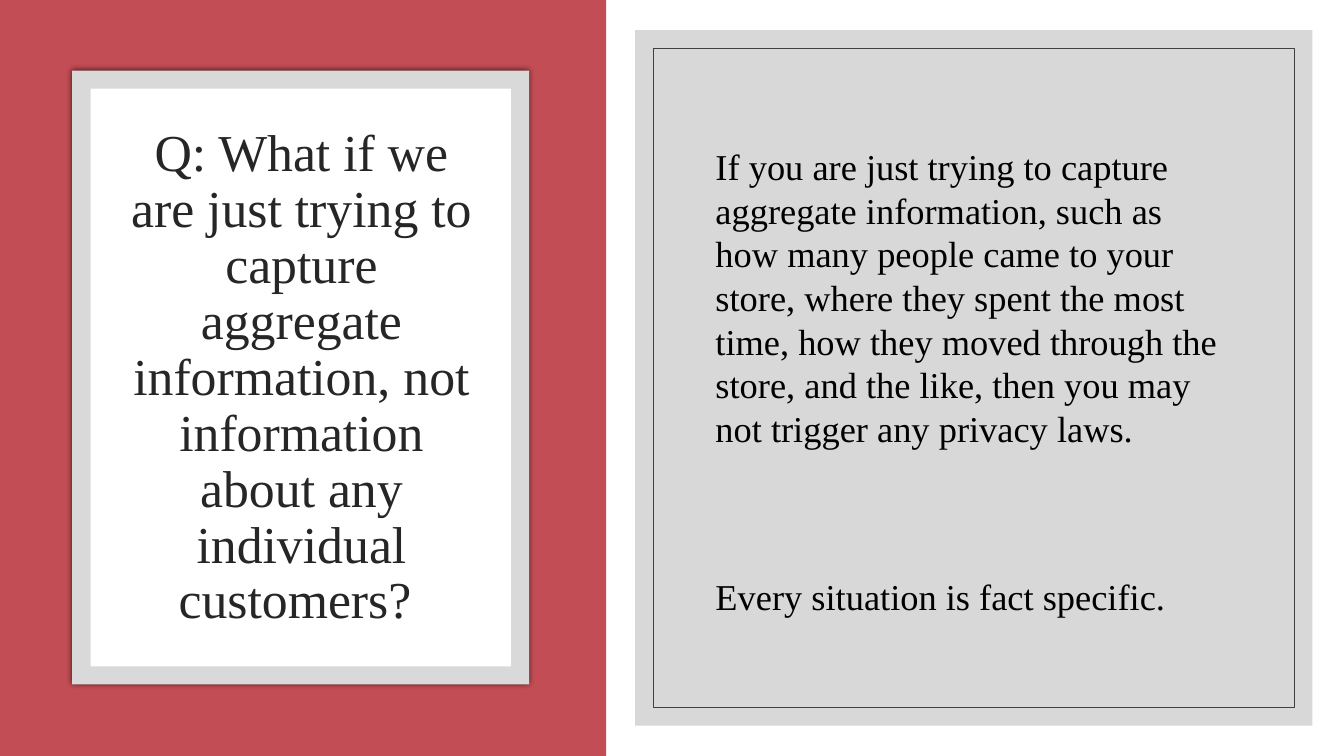
from pptx import Presentation
from pptx.dml.color import RGBColor as RGB
from pptx.enum.shapes import MSO_SHAPE as Shape
from pptx.enum.text import MSO_ANCHOR as Anchor, PP_ALIGN as Align
from pptx.oxml import parse_xml
from pptx.oxml.ns import nsdecls
from pptx.util import Pt

COLORS = {
    "red": "C34D54", "frame": "D9D9D9", "white": "FFFFFF", "panel": "BFBFBF",
    "line": "404040", "title": "262626", "body": "000000", "shade": "000000",
}


class Page:
    font = "Times New Roman"

    def __init__(self, deck):
        self.slide = deck.slides.add_slide(deck.slide_layouts[6])

    def color(self, name):
        return RGB.from_string(COLORS[name])

    def rect(self, x, y, w, h, fill=None, line=None, alpha=None):
        box = self.slide.shapes.add_shape(
            Shape.RECTANGLE, Pt(x), Pt(y), Pt(w), Pt(h))
        box.shadow.inherit = False
        if fill:
            box.fill.solid()
            box.fill.fore_color.rgb = self.color(fill)
        else:
            box.fill.background()
        if line:
            box.line.color.rgb = self.color(line)
            box.line.width = Pt(0.5)
        else:
            box.line.fill.background()
        if alpha:
            tint = box.fill._xPr.solidFill.srgbClr
            tint.append(parse_xml(
                f'<a:alpha {nsdecls("a")} val="{alpha * 1000}"/>'))
        return box

    def shade(self, box, blur, alpha):
        glow = box._element.spPr.find(
            "{http://schemas.openxmlformats.org/drawingml/2006/main}effectLst")
        glow.append(parse_xml(
            f'<a:outerShdw {nsdecls("a")} blurRad="{Pt(blur)}" dist="0" '
            f'algn="ctr" rotWithShape="0"><a:srgbClr val="{COLORS["shade"]}">'
            f'<a:alpha val="{alpha * 1000}"/></a:srgbClr></a:outerShdw>'))

    def text(self, x, y, w, h, lines, size, color,
             align=Align.LEFT, pitch=1.0, gap=0):
        box = self.slide.shapes.add_textbox(Pt(x), Pt(y), Pt(w), Pt(h))
        frame = box.text_frame
        frame.word_wrap = True
        frame.vertical_anchor = Anchor.MIDDLE
        for i, line in enumerate(lines):
            para = frame.add_paragraph() if i else frame.paragraphs[0]
            para.text = line
            para.alignment = align
            para.line_spacing = pitch
            if i:
                para.space_before = Pt(gap)
            para.font.name = self.font
            para.font.size = Pt(size)
            para.font.color.rgb = self.color(color)


def main():
    deck = Presentation()
    deck.slide_width, deck.slide_height = Pt(960), Pt(540)
    page = Page(deck)

    # Question card on the red side
    page.rect(0, 0, 433, 540, "red")
    card = page.rect(51.6, 50.4, 326.4, 438.4, "frame")
    page.shade(card, 4, 66)
    page.rect(64.8, 63.4, 300.2, 412.6, "white")
    page.text(77.8, 93.6, 275, 353.5, [
        "Q: What if we are just trying to capture aggregate information, "
        "not information about any individual customers? "],
        37, "title", Align.CENTER, 0.9)

    # Answer panel with a thin inner outline
    page.rect(453.6, 21.6, 483.8, 496.8, "panel", alpha=60)
    page.rect(466.6, 34.6, 457.9, 470.9, line="line")
    page.text(504, 76, 383.8, 392.4, [
        "If you are just trying to capture aggregate information, such as "
        "how many people came to your store, where they spent the most time, "
        "how they moved through the store, and the like, then you may not "
        "trigger any privacy laws.",
        "Every situation is fact specific."],
        26, "body", gap=89)

    deck.save("out.pptx")


if __name__ == "__main__":
    main()
